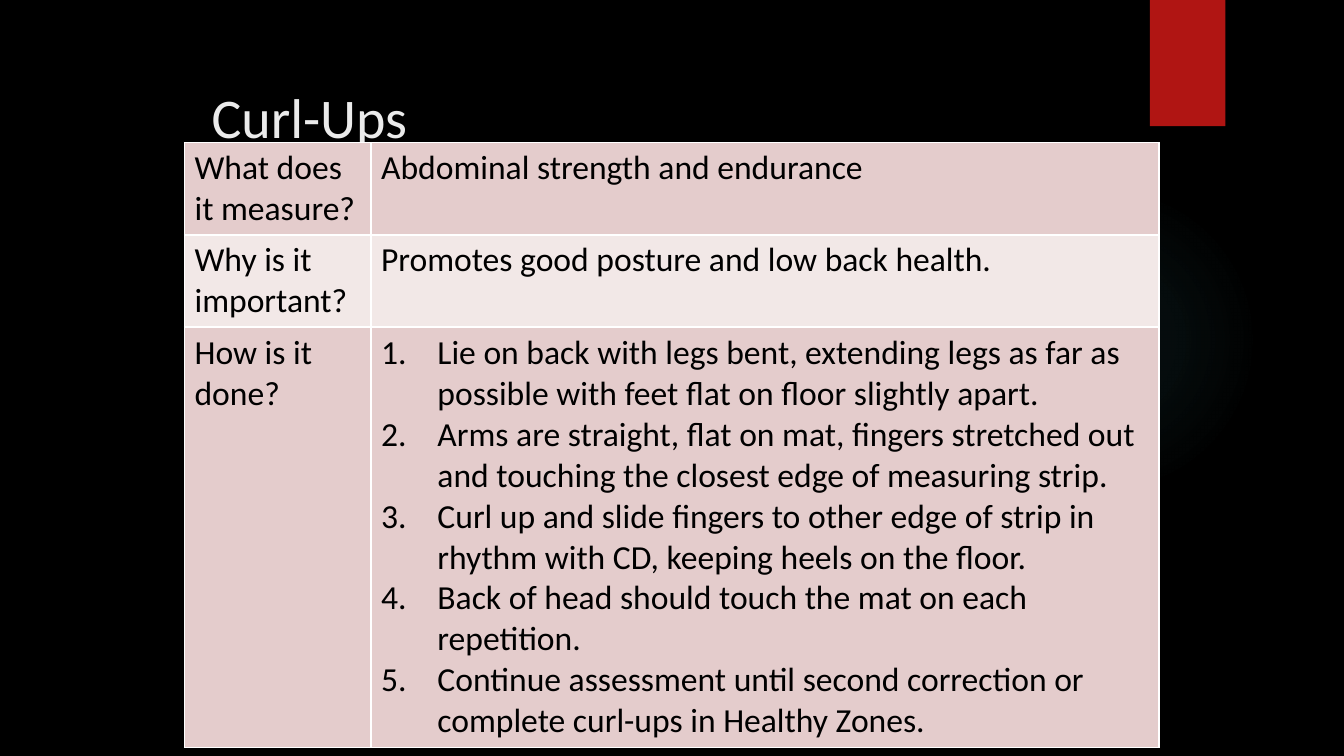
from lxml.etree import SubElement
from pptx import Presentation
from pptx.dml.color import RGBColor
from pptx.enum.shapes import MSO_SHAPE
from pptx.enum.text import MSO_ANCHOR, MSO_AUTO_SIZE, PP_ALIGN
from pptx.oxml.ns import qn
from pptx.util import Cm, Pt

FONT = "Calibri"
NUMBER_INDENT = Cm(1.42)
ROW_FILLS = ["E4CCCC", "F2E8E7"]
ROW_HEIGHTS = [2.29, 2.29, 10.45]
COLUMN_WIDTHS = [4.7, 19.86]
QUESTIONS = [
    ("What does it measure?", ["Abdominal strength and endurance"]),
    ("Why is it important?", ["Promotes good posture and low back health."]),
    ("How is it done?", [
        "Lie on back with legs bent, extending legs as far as possible "
        "with feet flat on floor slightly apart.",
        "Arms are straight, flat on mat, fingers stretched out and touching "
        "the closest edge of measuring strip.",
        "Curl up and slide fingers to other edge of strip in rhythm with CD, "
        "keeping heels on the floor.",
        "Back of head should touch the mat on each repetition.",
        "Continue assessment until second correction or complete curl-ups "
        "in Healthy Zones.",
    ]),
]


def color(value):
    return RGBColor.from_string(value)


def write(frame, *lines, size=24, ink="000000", numbered=False):
    frame.word_wrap = True
    for index, line in enumerate(lines):
        paragraph = frame.paragraphs[0] if index == 0 else frame.add_paragraph()
        if numbered:
            props = paragraph._p.get_or_add_pPr()
            props.set("marL", str(NUMBER_INDENT))
            props.set("indent", str(-NUMBER_INDENT))
            SubElement(props, qn("a:buFont"), typeface="+mj-lt")
            SubElement(props, qn("a:buAutoNum"), type="arabicPeriod")
        paragraph.alignment = PP_ALIGN.LEFT
        run = paragraph.add_run()
        run.text = line
        run.font.name = FONT
        run.font.size = Pt(size)
        run.font.bold = False
        run.font.color.rgb = color(ink)


def add_plain_shape(slide, kind, box):
    shape = slide.shapes.add_shape(kind, *map(Cm, box))
    shape.shadow.inherit = False
    shape.line.fill.background()
    return shape


def add_backdrop(slide, glow_box, ribbon_box):
    slide.background.fill.solid()
    slide.background.fill.fore_color.rgb = color("000000")

    # Soft round glow that fades outwards
    glow = add_plain_shape(slide, MSO_SHAPE.OVAL, glow_box)
    glow.fill.gradient()
    gradient = glow._element.spPr.find(qn("a:gradFill"))
    for child in list(gradient):
        gradient.remove(child)
    stops = SubElement(gradient, qn("a:gsLst"))
    for position, opacity in [(0, 7), (36, 6), (69, 0)]:
        stop = SubElement(stops, qn("a:gs"), pos=str(position * 1000))
        tint = SubElement(stop, qn("a:srgbClr"), val="50B9C1")
        SubElement(tint, qn("a:alpha"), val=str(opacity * 1000))
    path = SubElement(gradient, qn("a:path"), path="circle")
    SubElement(path, qn("a:fillToRect"), l="50000", t="50000", r="50000", b="50000")

    # Red ribbon at the top
    ribbon = add_plain_shape(slide, MSO_SHAPE.RECTANGLE, ribbon_box)
    ribbon.fill.solid()
    ribbon.fill.fore_color.rgb = color("B01513")


def add_title(slide, box):
    title = slide.shapes.title
    title.left, title.top, title.width, title.height = map(Cm, box)
    frame = title.text_frame
    frame.auto_size = MSO_AUTO_SIZE.NONE
    frame.vertical_anchor = MSO_ANCHOR.TOP
    frame.margin_top, frame.margin_bottom = Cm(0.19), Cm(0)
    write(frame, "Curl-Ups", size=40, ink="EBEBEB")


def add_borders(cell):
    props = cell._tc.get_or_add_tcPr()
    for side in ("lnL", "lnR", "lnT", "lnB"):
        line = SubElement(props, qn(f"a:{side}"), w=str(Pt(1)))
        fill = SubElement(line, qn("a:solidFill"))
        SubElement(fill, qn("a:srgbClr"), val="FFFFFF")


def add_question_table(slide, left, top):
    table = slide.shapes.add_table(
        len(QUESTIONS), len(COLUMN_WIDTHS), Cm(left), Cm(top),
        Cm(sum(COLUMN_WIDTHS)), Cm(sum(ROW_HEIGHTS))).table
    table.first_row = table.horz_banding = False
    for column, width in zip(table.columns, COLUMN_WIDTHS):
        column.width = Cm(width)
    for index, (question, answers) in enumerate(QUESTIONS):
        row = table.rows[index]
        row.height = Cm(ROW_HEIGHTS[index])
        for cell, lines in zip(row.cells, ([question], answers)):
            add_borders(cell)
            cell.fill.solid()
            cell.fill.fore_color.rgb = color(ROW_FILLS[index % 2])
            write(cell.text_frame, *lines, numbered=len(lines) > 1)


def main():
    deck = Presentation()
    deck.slide_width, deck.slide_height = Cm(33.87), Cm(19.05)
    slide = deck.slides.add_slide(deck.slide_layouts[5])
    add_backdrop(slide, (23.9, 4.65, 7.82, 7.82), (28.98, 0, 1.9, 3.18))
    add_title(slide, (5.08, 1.9, 22.86, 1.9))
    add_question_table(slide, 4.65, 3.6)
    deck.save("out.pptx")


if __name__ == "__main__":
    main()
